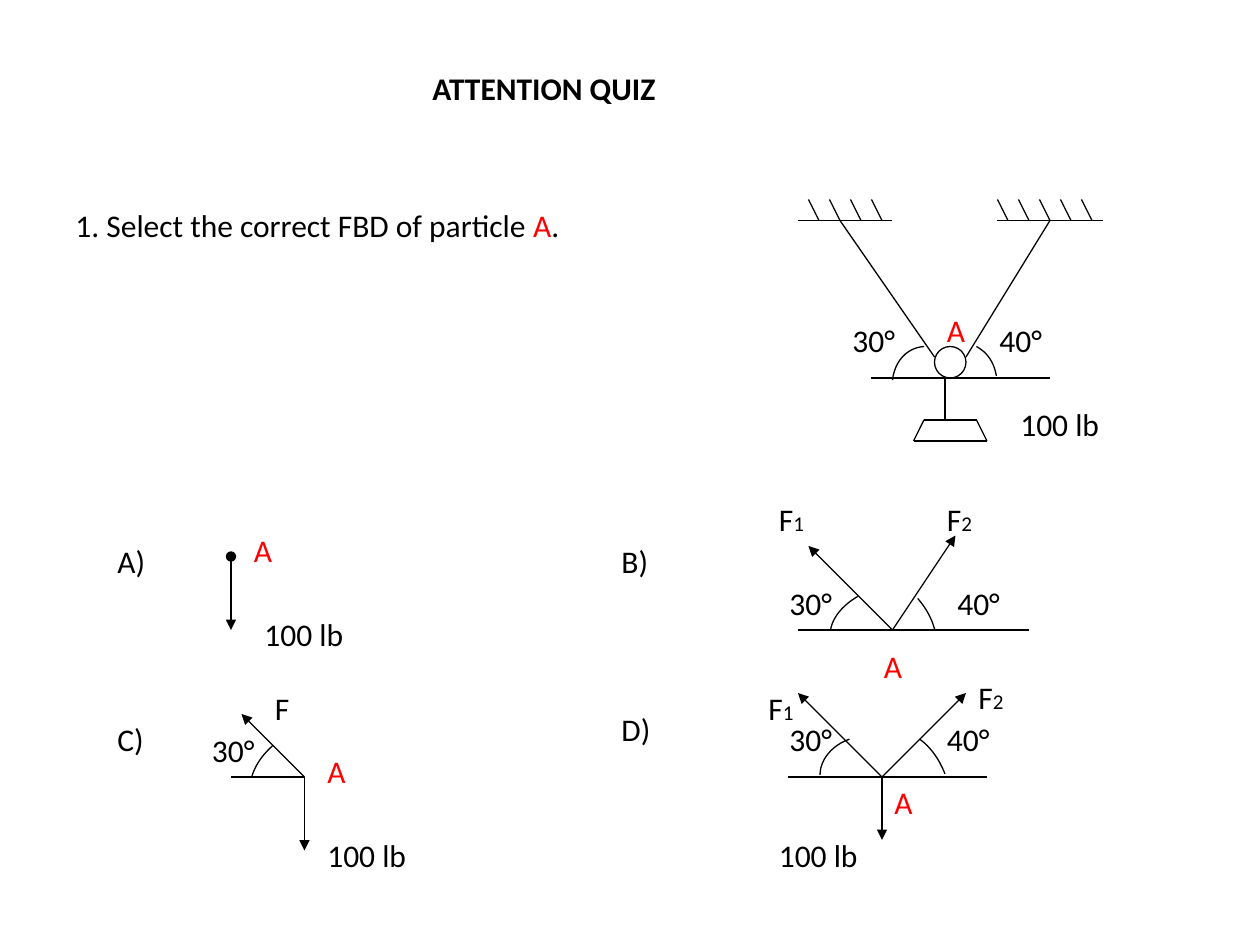
"""Build the attention quiz slide on free-body diagrams of particle A."""
from dataclasses import dataclass
from itertools import pairwise

from lxml.etree import SubElement
from pptx import Presentation
from pptx.dml.color import RGBColor
from pptx.enum.shapes import MSO_CONNECTOR as Conn, MSO_SHAPE as Shape
from pptx.enum.text import MSO_AUTO_SIZE as AutoSize
from pptx.oxml.ns import qn
from pptx.util import Pt

PX = 7620
COLORS = {"black": "000000", "red": "FF0000", "white": "FFFFFF"}
FONT = "Calibri"
Point = tuple[int, int]


@dataclass(frozen=True)
class Run:
    text: str
    color: str = "black"
    size: int = 18
    bold: bool = False


@dataclass(frozen=True)
class Label:
    x: int
    y: int
    w: int
    runs: tuple[Run, ...]
    h: int = 48
    wrap: bool = True


@dataclass(frozen=True)
class Line:
    start: Point
    end: Point
    head: str = ""
    tail: str = ""


@dataclass(frozen=True)
class Arc:
    start: Point
    control1: Point
    control2: Point
    end: Point


A = (Run("A", "red"),)
LEFT_ANGLE = (Run("30°"),)
RIGHT_ANGLE = (Run("40°"),)
WEIGHT = (Run("100 lb"),)
F1 = (Run("F"), Run("1", size=12))
F2 = (Run("F"), Run("2", size=12))

PAN = [(880, 400), (930, 400), (940, 420), (870, 420), (880, 400)]
HATCHES = [*range(770, 850, 20), *range(950, 1050, 20)]

CABLES = [
    Line((760, 210), (850, 210)),
    Line((950, 210), (1050, 210)),
    Line((800, 210), (890, 340)),
    Line((1000, 210), (920, 340)),
]
SUPPORTS = [
    Line((830, 360), (1000, 360)),
    Line((900, 360), (900, 400)),
    *(Line(a, b) for a, b in pairwise(PAN)),
    *(Line((x, 190), (x + 10, 210)) for x in HATCHES),
]
FORCES = [
    Line((220, 530), (220, 600), head="oval", tail="triangle"),
    Line((760, 600), (980, 600)),
    Line((850, 600), (770, 520), tail="triangle"),
    Line((850, 600), (910, 510), tail="triangle"),
    Line((290, 740), (230, 680), tail="triangle"),
    Line((220, 740), (290, 740)),
    Line((290, 740), (290, 810), tail="triangle"),
    Line((840, 740), (760, 660), tail="triangle"),
    Line((750, 740), (940, 740)),
    Line((840, 740), (920, 660), tail="triangle"),
    Line((840, 740), (840, 800), tail="triangle"),
]
ARCS = [
    Arc((930, 330), (941, 336), (947, 346), (949, 358)),
    Arc((880, 330), (864, 331), (852, 344), (850, 362)),
    Arc((791, 600), (793, 588), (803, 576), (817, 568)),
    Arc((874, 570), (881, 578), (887, 588), (890, 599)),
    Arc((240, 739), (244, 727), (251, 718), (260, 710)),
    Arc((876, 704), (887, 712), (895, 724), (900, 737)),
    Arc((781, 738), (781, 724), (792, 710), (809, 704)),
]
LABELS = [
    Label(400, 60, 390, (Run("ATTENTION QUIZ", bold=True),)),
    Label(60, 190, 680, (Run("1. Select the correct FBD of particle "), *A, Run("."))),
    Label(890, 290, 40, A),
    Label(800, 300, 80, LEFT_ANGLE),
    Label(940, 300, 80, RIGHT_ANGLE),
    Label(960, 380, 130, WEIGHT),
    Label(100, 510, 100, (Run("A)"),), h=60),
    Label(230, 500, 70, A),
    Label(240, 580, 100, WEIGHT),
    Label(580, 510, 90, (Run("B)"),), h=60),
    Label(730, 470, 70, F1),
    Label(890, 470, 70, F2),
    Label(740, 550, 80, LEFT_ANGLE),
    Label(900, 550, 110, RIGHT_ANGLE),
    Label(830, 610, 70, A),
    Label(100, 680, 70, (Run("C)"),), h=60),
    Label(250, 650, 70, (Run("F"),)),
    Label(190, 690, 80, LEFT_ANGLE),
    Label(300, 710, 70, A),
    Label(300, 790, 170, WEIGHT),
    Label(580, 670, 90, (Run("D)"),), h=60),
    Label(720, 650, 70, F1),
    Label(920, 640, 70, F2),
    Label(740, 680, 80, LEFT_ANGLE),
    Label(890, 680, 66, RIGHT_ANGLE, wrap=False),
    Label(840, 740, 60, A),
    Label(730, 790, 120, WEIGHT),
]


def rgb(name: str) -> RGBColor:
    return RGBColor.from_string(COLORS[name])


def set_outline(sp) -> None:
    sp.line.color.rgb = rgb("black")
    sp.line.width = Pt(0.75)


def add_run(p, text: str, *, color: str, size: int, bold: bool) -> None:
    r = p.add_run()
    r.text = text
    r.font.name = FONT
    r.font.size = Pt(size)
    r.font.bold = bold
    r.font.color.rgb = rgb(color)


def draw_label(shapes, label: Label) -> None:
    sp = shapes.add_textbox(*(v * PX for v in (label.x, label.y, label.w, label.h)))
    tf = sp.text_frame
    tf.word_wrap = label.wrap
    tf.auto_size = AutoSize.SHAPE_TO_FIT_TEXT
    for run in label.runs:
        add_run(tf.paragraphs[0], run.text, color=run.color, size=run.size, bold=run.bold)


def draw_line(shapes, line: Line) -> None:
    sp = shapes.add_connector(Conn.STRAIGHT, *(v * PX for v in line.start + line.end))
    set_outline(sp)
    sp_pr = sp._element.spPr
    for tag, kind in (("a:headEnd", line.head), ("a:tailEnd", line.tail)):
        if kind:
            SubElement(sp_pr.find(qn("a:ln")), qn(tag), type=kind)
    SubElement(sp_pr, qn("a:effectLst"))


def draw_arc(shapes, arc: Arc, steps: int = 12) -> None:
    points = []
    for i in range(steps + 1):
        t = i / steps
        weights = ((1 - t) ** 3, 3 * t * (1 - t) ** 2, 3 * t**2 * (1 - t), t**3)
        nodes = (arc.start, arc.control1, arc.control2, arc.end)
        points.append(tuple(round(PX * sum(w * n[k] for w, n in zip(weights, nodes))) for k in (0, 1)))
    builder = shapes.build_freeform(*points[0])
    builder.add_line_segments(points[1:], close=False)
    sp = builder.convert_to_shape()
    sp.shadow.inherit = False
    sp.fill.background()
    set_outline(sp)


def draw_particle(shapes, x: int, y: int, size: int) -> None:
    sp = shapes.add_shape(Shape.OVAL, x * PX, y * PX, size * PX, size * PX)
    sp.shadow.inherit = False
    sp.fill.solid()
    sp.fill.fore_color.rgb = rgb("white")
    set_outline(sp)


def main() -> None:
    prs = Presentation()
    prs.slide_width, prs.slide_height = 1200 * PX, 900 * PX
    shapes = prs.slides.add_slide(prs.slide_layouts[6]).shapes
    for line in CABLES:
        draw_line(shapes, line)
    draw_particle(shapes, 890, 330, 30)
    for line in SUPPORTS + FORCES:
        draw_line(shapes, line)
    for arc in ARCS:
        draw_arc(shapes, arc)
    for label in LABELS:
        draw_label(shapes, label)
    prs.save("out.pptx")


if __name__ == "__main__":
    main()
